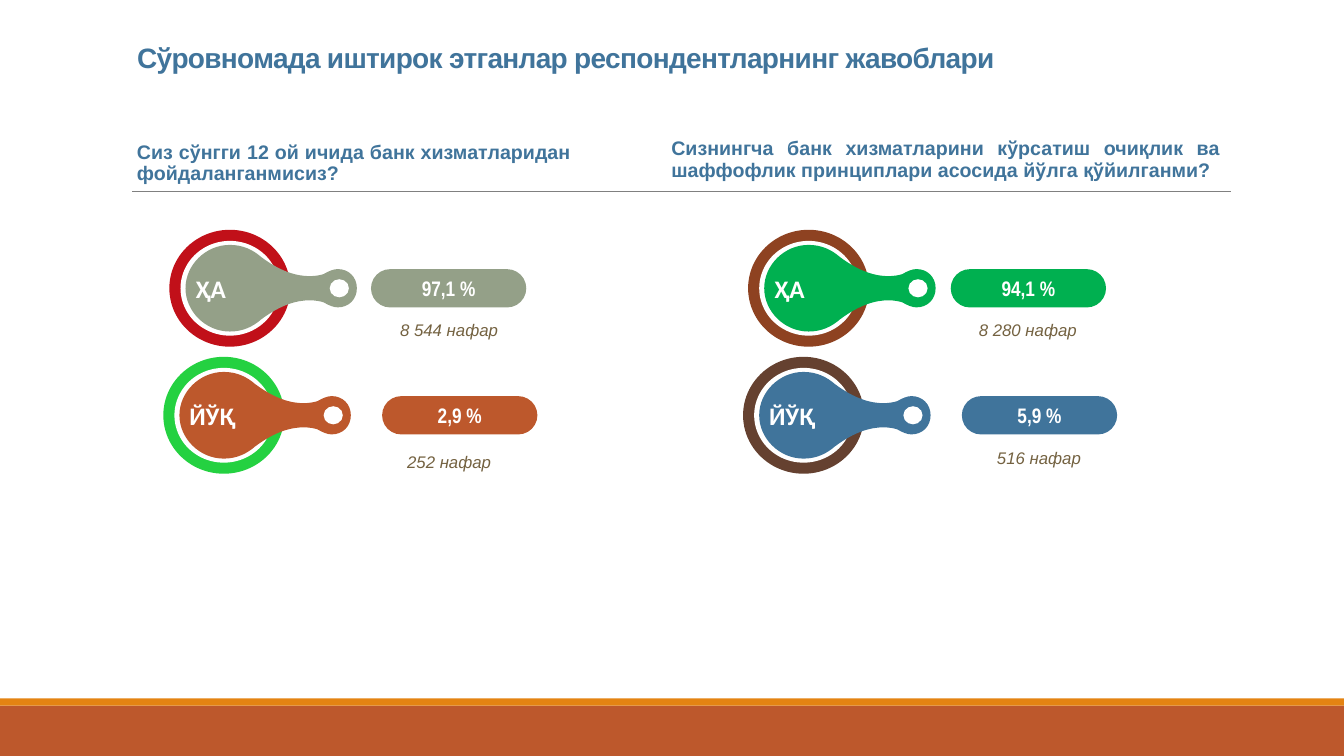
from dataclasses import dataclass

import lxml.etree
import pptx
import pptx.dml.color
import pptx.enum.shapes
import pptx.enum.text
import pptx.oxml
import pptx.oxml.ns
import pptx.shapes.base
import pptx.slide
import pptx.text.text
import pptx.util

Inches = pptx.util.Inches
RGBColor = pptx.dml.color.RGBColor
Shape = pptx.enum.shapes.MSO_SHAPE
Align = pptx.enum.text.PP_ALIGN
Anchor = pptx.enum.text.MSO_ANCHOR
qn = pptx.oxml.ns.qn

WHITE = RGBColor(0xFF, 0xFF, 0xFF)
BLUE = RGBColor(0x40, 0x74, 0x9B)
RUST = RGBColor(0xBD, 0x58, 0x2C)
ORANGE = RGBColor(0xE4, 0x83, 0x12)
GREY = RGBColor(0x80, 0x80, 0x80)
SAGE = RGBColor(0x94, 0xA0, 0x88)
GREEN = RGBColor(0x00, 0xB0, 0x50)
LIME = RGBColor(0x24, 0xD1, 0x41)
RED = RGBColor(0xC1, 0x10, 0x19)
BROWN = RGBColor(0x8E, 0x42, 0x21)
DARK_BROWN = RGBColor(0x65, 0x41, 0x30)
OLIVE = RGBColor(0x74, 0x62, 0x41)

YES_TOP = 2.28
NO_TOP = 3.54
PADDLE_HALF_HEIGHT = 0.43
UPPER_CURVES = [
    [(0, 0), (0, -0.23), (0.2, -0.43), (0.44, -0.43)],
    [(0.44, -0.43), (0.57, -0.43), (0.67, -0.38), (0.75, -0.31)],
    [(0.75, -0.31), (0.95, -0.16), (1.11, -0.12), (1.23, -0.12)],
    [(1.23, -0.12), (1.29, -0.12), (1.34, -0.13), (1.37, -0.14)],
    [(1.37, -0.14), (1.42, -0.17), (1.47, -0.19), (1.51, -0.19)],
    [(1.51, -0.19), (1.62, -0.19), (1.7, -0.11), (1.7, 0)],
]
LOWER_CURVES = [[(x, -y) for x, y in reversed(curve)] for curve in reversed(UPPER_CURVES)]
PADDLE_CURVES = UPPER_CURVES + LOWER_CURVES


@dataclass
class Style:
    font: str
    size: float
    color: RGBColor
    bold: bool = False
    italic: bool = False
    align: Align = Align.LEFT
    line_spacing: float = 1.0


@dataclass
class Question:
    left: float
    top: float
    width: float
    text: str


@dataclass
class Answer:
    left: float
    top: float
    pill_offset: float
    label: str
    percent: str
    ring: RGBColor
    fill: RGBColor


@dataclass
class Caption:
    left: float
    top: float
    text: str
    align: Align = Align.CENTER


TITLE_STYLE = Style("Arial", 20, BLUE, bold=True, line_spacing=0.85)
QUESTION_STYLE = Style("Arial", 14, BLUE, bold=True, align=Align.JUSTIFY, line_spacing=0.9)
LABEL_STYLE = Style("Calibri", 18, WHITE, bold=True)
PERCENT_STYLE = Style("Arial Narrow", 15, WHITE, bold=True, align=Align.CENTER)

QUESTIONS = [
    Question(1.26, 1.24, 4.5, "Сиз сўнгги 12 ой ичида банк хизматларидан фойдаланганмисиз?"),
    Question(6.56, 1.21, 5.64, "Сизнингча банк хизматларини кўрсатиш очиқлик ва шаффофлик "
             "принциплари асосида йўлга қўйилганми?"),
]
ANSWERS = [
    Answer(1.62, NO_TOP, 2.17, "ЙЎҚ", "2,9 %", LIME, RUST),
    Answer(1.68, YES_TOP, 2.0, "ҲА", "97,1 %", RED, SAGE),
    Answer(7.37, NO_TOP, 2.17, "ЙЎҚ", "5,9 %", DARK_BROWN, BLUE),
    Answer(7.42, YES_TOP, 2.01, "ҲА", "94,1 %", BROWN, GREEN),
]
CAPTIONS = [
    Caption(3.87, 3.13, "8 544 нафар", Align.JUSTIFY),
    Caption(3.87, 4.44, "252 нафар"),
    Caption(9.61, 3.13, "8 280 нафар"),
    Caption(9.72, 4.4, "516 нафар"),
]


def write(frame: pptx.text.text.TextFrame, text: str, style: Style,
          anchor: Anchor = Anchor.MIDDLE) -> None:
    frame.word_wrap = True
    frame.auto_size = pptx.enum.text.MSO_AUTO_SIZE.NONE
    frame.vertical_anchor = anchor
    para = frame.paragraphs[0]
    para.text = text
    para.alignment = style.align
    para.line_spacing = style.line_spacing
    para.font.name = style.font
    para.font.size = pptx.util.Pt(style.size)
    para.font.bold = style.bold
    para.font.italic = style.italic
    para.font.color.rgb = style.color


def paint(shape: pptx.shapes.base.BaseShape, color: RGBColor) -> None:
    shape.shadow.inherit = False
    shape.fill.solid()
    shape.fill.fore_color.rgb = color
    shape.line.fill.background()


def write_inside(shape: pptx.shapes.base.BaseShape, text: str, style: Style) -> None:
    frame = shape.text_frame
    frame.margin_left = frame.margin_right = Inches(0.1)
    frame.margin_top = frame.margin_bottom = Inches(0.1)
    write(frame, text, style)


def add_filled(shapes, kind: Shape, left: float, top: float, width: float,
               height: float, color: RGBColor) -> pptx.shapes.base.BaseShape:
    shape = shapes.add_shape(kind, Inches(left), Inches(top), Inches(width), Inches(height))
    paint(shape, color)
    return shape


def add_text(page: pptx.slide.Slide, left: float, top: float, width: float,
             height: float, text: str, style: Style) -> None:
    box = page.shapes.add_textbox(Inches(left), Inches(top), Inches(width), Inches(height))
    write(box.text_frame, text, style)


def add_paddle(shapes, left: float, middle: float) -> pptx.shapes.base.BaseShape:
    ends = [(Inches(left + curve[-1][0]), Inches(middle + curve[-1][1]))
            for curve in PADDLE_CURVES]
    builder = shapes.build_freeform(Inches(left), Inches(middle))
    builder.add_line_segments(ends, close=True)
    paddle = builder.convert_to_shape()
    for segment, curve in zip(list(paddle._element.iter(qn("a:lnTo"))), PADDLE_CURVES):
        bend = lxml.etree.Element(qn("a:cubicBezTo"))
        for x, y in curve[1:]:
            lxml.etree.SubElement(bend, qn("a:pt"), x=str(int(Inches(x))),
                                  y=str(int(Inches(y + PADDLE_HALF_HEIGHT))))
        segment.getparent().replace(segment, bend)
    return paddle


def add_answer(page: pptx.slide.Slide, answer: Answer) -> None:
    shapes = page.shapes.add_group_shape().shapes
    left, top = answer.left, answer.top
    add_filled(shapes, Shape.OVAL, left, top, 1.2, 1.16, answer.ring)
    add_filled(shapes, Shape.OVAL, left + 0.11, top + 0.11, 0.98, 0.94, WHITE)
    paddle = add_paddle(shapes, left + 0.16, top + 0.58)
    paint(paddle, answer.fill)
    write_inside(paddle, answer.label, LABEL_STYLE)
    add_filled(shapes, Shape.OVAL, left + 1.59, top + 0.49, 0.19, 0.18, WHITE)
    pill = add_filled(shapes, Shape.ROUNDED_RECTANGLE, left + answer.pill_offset,
                      top + 0.39, 1.54, 0.38, answer.fill)
    pill.adjustments[0] = 0.5
    write_inside(pill, answer.percent, PERCENT_STYLE)


def add_rule(page: pptx.slide.Slide) -> None:
    rule = page.shapes.add_connector(pptx.enum.shapes.MSO_CONNECTOR.STRAIGHT,
                                     Inches(1.31), Inches(1.9), Inches(12.21), Inches(1.9))
    rule.line.color.rgb = GREY
    rule.line.width = pptx.util.Pt(0.5)
    lxml.etree.SubElement(rule._element.spPr, qn("a:effectLst"))


def main() -> None:
    deck = pptx.Presentation()
    deck.slide_width, deck.slide_height = Inches(13.33), Inches(7.5)
    page = deck.slides.add_slide(deck.slide_layouts[5])
    add_filled(page.shapes, Shape.RECTANGLE, 0, 7, 13.33, 0.5, RUST)
    add_filled(page.shapes, Shape.RECTANGLE, 0, 6.93, 13.33, 0.07, ORANGE)
    add_rule(page)
    title = page.shapes.title
    title.left, title.top = Inches(1.26), Inches(0.03)
    title.width, title.height = Inches(11.5), Inches(0.76)
    write(title.text_frame, "Сўровномада иштирок этганлар респондентларнинг жавоблари",
          TITLE_STYLE, Anchor.BOTTOM)
    title.text_frame.paragraphs[0].font._element.set("spc", "-50")
    for question in QUESTIONS:
        add_text(page, question.left, question.top, question.width, 0.76,
                 question.text, QUESTION_STYLE)
    for answer in ANSWERS:
        add_answer(page, answer)
    for caption in CAPTIONS:
        style = Style("Arial", 12, OLIVE, italic=True, align=caption.align, line_spacing=0.9)
        add_text(page, caption.left, caption.top, 1.17, 0.3, caption.text, style)
    deck.save("out.pptx")


if __name__ == "__main__":
    main()
